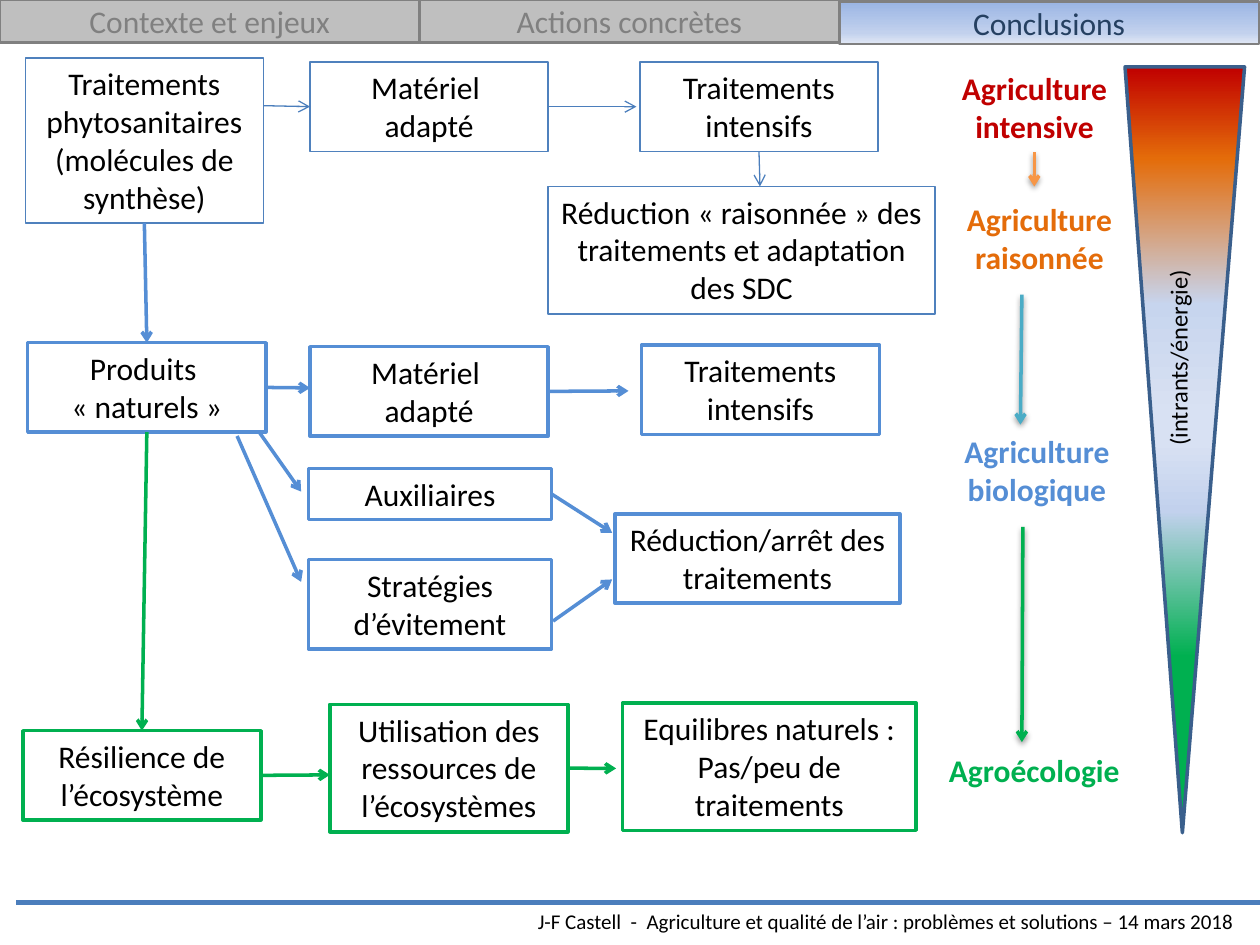
from lxml import etree
from pptx import Presentation, util as u
from pptx.dml.color import RGBColor
from pptx.enum import shapes, text
from pptx.oxml import parse_xml
from pptx.oxml.ns import qn

NS = 'xmlns:a="http://schemas.openxmlformats.org/drawingml/2006/main"'
PALE, BLUE, GREEN = "4F81BD", "558ED5", "00B050"
THIN, THICK = 0.75, 2
TOP, LEFT, BOTTOM, RIGHT = range(4)
WIDE = 4.8
ROW = {1: 1.02, 2: 1.8, 3: 2.57, 4: 3.33}  # box height by number of text lines
CENTER, RIGHT_ALIGN = text.PP_ALIGN.CENTER, text.PP_ALIGN.RIGHT


def rgb(value):
    return RGBColor.from_string(value)


def cm(*values):
    return [u.Cm(v) for v in values]


def set_line(line, color, width):
    line.color.rgb = rgb(color)
    line.width = u.Pt(width)


def write(sp, paragraphs, color="000000", size=18, bold=False, align=CENTER, **frame):
    tf = sp.text_frame
    settings = {"word_wrap": True, "vertical_anchor": text.MSO_ANCHOR.TOP,
                "auto_size": text.MSO_AUTO_SIZE.SHAPE_TO_FIT_TEXT, **frame}
    for name, value in settings.items():
        setattr(tf, name, value)
    font = {"name": "Calibri", "size": u.Pt(size), "bold": bold}
    for i, line in enumerate(paragraphs):
        p = tf.add_paragraph() if i else tf.paragraphs[0]
        p.text = line
        p.alignment = align
        for r in p.runs:
            for name, value in font.items():
                setattr(r.font, name, value)
            r.font.color.rgb = rgb(color)


def add_shape(s, kind, at, color, width):
    sp = s.shapes.add_shape(kind, *cm(*at))
    sp.shadow.inherit = False
    sp.fill.background()
    set_line(sp.line, color, width)
    return sp


def add_box(s, at, paragraphs, color, width):
    sp = add_shape(s, shapes.MSO_SHAPE.RECTANGLE, at, color, width)
    write(sp, paragraphs)
    return sp


def add_text(s, at, paragraphs, **style):
    sp = s.shapes.add_textbox(*cm(*at))
    write(sp, paragraphs, **style)
    return sp


def add_gradient(sp, stops):
    sp.fill.gradient()
    old = sp.element.spPr.find(qn("a:gradFill"))
    marks = "".join(f'<a:gs pos="{pos * 1000}"><a:srgbClr val="{color}"/></a:gs>'
                    for pos, color in stops)
    new = parse_xml(f'<a:gradFill {NS} rotWithShape="1"><a:gsLst>{marks}</a:gsLst>'
                    '<a:lin ang="5400000" scaled="0"/></a:gradFill>')
    old.getparent().replace(old, new)


def add_line(s, start, end, color, width, arrow=True, shadow=False):
    """Each end is an (x, y) point or a (shape, connection site) pair."""
    points = [(0, 0) if hasattr(e[0], "shape_id") else e for e in (start, end)]
    c = s.shapes.add_connector(shapes.MSO_CONNECTOR.STRAIGHT, *cm(*points[0], *points[1]))
    for e, connect in ((start, c.begin_connect), (end, c.end_connect)):
        if hasattr(e[0], "shape_id"):
            connect(*e)
    set_line(c.line, color, width)
    spPr = c._element.spPr
    if arrow:
        etree.SubElement(spPr.find(qn("a:ln")), qn("a:tailEnd"), type="arrow")
    effects = etree.SubElement(spPr, qn("a:effectLst"))
    if shadow:
        effects.append(parse_xml(
            f'<a:outerShdw {NS} blurRad="40000" dist="20000" dir="5400000" rotWithShape="0">'
            '<a:srgbClr val="000000"><a:alpha val="38000"/></a:srgbClr></a:outerShdw>'))


def add_intensive(s):
    # Conventional treatments
    synth = add_box(s, (0.51, 1.17, WIDE, ROW[4]),
                    ["Traitements phytosanitaires", "(molécules de synthèse)"], PALE, THIN)
    gear = add_box(s, (6.25, 1.25, WIDE, ROW[2]), ["Matériel ", "adapté"], PALE, THIN)
    heavy = add_box(s, (12.9, 1.25, WIDE, ROW[2]), ["Traitements intensifs"], PALE, THIN)
    add_box(s, (11.05, 3.76, 7.8, ROW[3]),
            ["Réduction « raisonnée » des traitements et adaptation des SDC"], PALE, THIN)
    for start, end in [((5.31, 2.13), (gear, LEFT)),
                       ((gear, RIGHT), (12.83, 2.15)),
                       ((heavy, BOTTOM), (15.32, 3.76))]:
        add_line(s, start, end, "4B7EBC", THIN)
    return synth


def add_organic(s, synth):
    # Natural products and alternatives
    natural = add_box(s, (0.56, 6.91, WIDE, ROW[2]), ["Produits ", "« naturels »"], BLUE, THICK)
    gear = add_box(s, (6.25, 6.99, WIDE, ROW[2]), ["Matériel ", "adapté"], BLUE, THICK)
    add_box(s, (12.93, 6.96, WIDE, ROW[2]), ["Traitements intensifs"], BLUE, THICK)
    helpers = add_box(s, (6.22, 9.45, 4.9, ROW[1]), ["Auxiliaires"], BLUE, THICK)
    add_box(s, (6.22, 11.28, 4.9, ROW[2]), ["Stratégies d’évitement"], BLUE, THICK)
    add_box(s, (12.4, 10.36, 5.74, ROW[2]), ["Réduction/arrêt des traitements"], BLUE, THICK)
    for start, end in [((synth, BOTTOM), (natural, TOP)),
                       ((natural, RIGHT), (6.25, 7.82)),
                       ((gear, RIGHT), (12.67, 7.88)),
                       ((5.21, 8.69), (6.07, 9.91)),
                       ((4.78, 8.79), (6.07, 11.73)),
                       ((helpers, RIGHT), (12.34, 10.74)),
                       ((11.15, 12.52), (12.34, 11.68))]:
        add_line(s, start, end, BLUE, THICK)
    return natural


def add_agroecology(s, natural):
    # Ecosystem resilience
    resilience = add_box(s, (0.46, 14.73, WIDE, ROW[2]),
                         ["Résilience de l’écosystème"], GREEN, THICK)
    resources = add_box(s, (6.65, 14.2, WIDE, ROW[3]),
                        ["Utilisation des ressources de l’écosystèmes"], GREEN, THICK)
    add_box(s, (12.55, 14.17, 5.92, ROW[3]),
            ["Equilibres naturels :\vPas/peu de traitements"], GREEN, THICK)
    for start, end in [((natural, BOTTOM), (resilience, TOP)),
                       ((resilience, RIGHT), (6.65, 15.62)),
                       ((resources, RIGHT), (12.42, 15.49))]:
        add_line(s, start, end, GREEN, THICK)


def add_systems(s):
    # Farming systems, from intensive to agroecology
    for x, y, width, lines, color in [
            (19.13, 1.27, 3.45, ["Agriculture", "intensive"], "C00000"),
            (19.23, 3.91, 3.45, ["Agriculture", "raisonnée"], "E46C0A"),
            (19.18, 8.59, 3.45, ["Agriculture", "biologique"], BLUE),
            (18.87, 15.01, 3.96, ["Agroécologie"], GREEN)]:
        add_text(s, (x, y, width, ROW[len(lines)]), lines,
                 color=color, bold=True, word_wrap=False)
    for start, end, color in [((20.85, 3.07), (20.85, 3.76), "F79646"),
                              ((20.6, 5.94), (20.57, 8.56), "4BACC6"),
                              ((20.62, 10.62), (20.6, 14.96), GREEN)]:
        add_line(s, start, end, color, THICK, shadow=True)


def add_tabs(s):
    # Navigation tabs, the last one active
    width = 8.46
    for i, title in enumerate(["Contexte et enjeux", "Actions concrètes", "Conclusions"]):
        active = i == 2
        sp = add_shape(s, shapes.MSO_SHAPE.RECTANGLE,
                       (i * width, 0.03 if active else 0, width, 0.86), "808080", 1.5)
        if active:
            add_gradient(sp, [(0, "9AB5E4"), (74, "C2D1ED"), (100, "E1E8F5")])
        else:
            sp.fill.solid()
            sp.fill.fore_color.rgb = rgb("BFBFBF")
        write(sp, [title], color="254061" if active else "808080",
              vertical_anchor=text.MSO_ANCHOR.MIDDLE, auto_size=text.MSO_AUTO_SIZE.NONE)


def add_footer(s):
    add_text(s, (0.33, 18.19, 25.1, 0.76),
             ["J-F Castell  -  Agriculture et qualité de l’air : problèmes et solutions – 14 mars 2018"],
             size=12, align=RIGHT_ALIGN, margin_right=u.Cm(0.55))
    add_line(s, (0.33, 18.19), (25.4, 18.19), "4B7EBC", 2.5, arrow=False)


def add_input_scale(s):
    # Inputs and energy, shrinking downwards
    sp = add_shape(s, shapes.MSO_SHAPE.ISOSCELES_TRIANGLE,
                   (22.68, 1.35, 2.41, 15.44), "3A5F8C", THICK)
    sp.adjustments[0] = 0.48
    sp.element.spPr.find(qn("a:xfrm")).set("flipV", "1")
    add_gradient(sp, [(23, GREEN), (42, "C2D1ED"), (51, "D8E1F3"), (56, "D7E0F2"),
                      (69, "C7D5EE"), (88, "E46C0A"), (100, "C00000")])
    label = add_text(s, (21.84, 6.63, 4.09, 1.12), ["(intrants/énergie)"], size=14,
                     align=text.PP_ALIGN.LEFT, word_wrap=False)
    label.rotation = 270


def main():
    prs = Presentation()
    prs.slide_width, prs.slide_height = cm(25.4, 19.05)
    s = prs.slides.add_slide(prs.slide_layouts[6])
    synth = add_intensive(s)
    natural = add_organic(s, synth)
    add_agroecology(s, natural)
    add_systems(s)
    add_tabs(s)
    add_footer(s)
    add_input_scale(s)
    prs.save("out.pptx")


if __name__ == "__main__":
    main()
